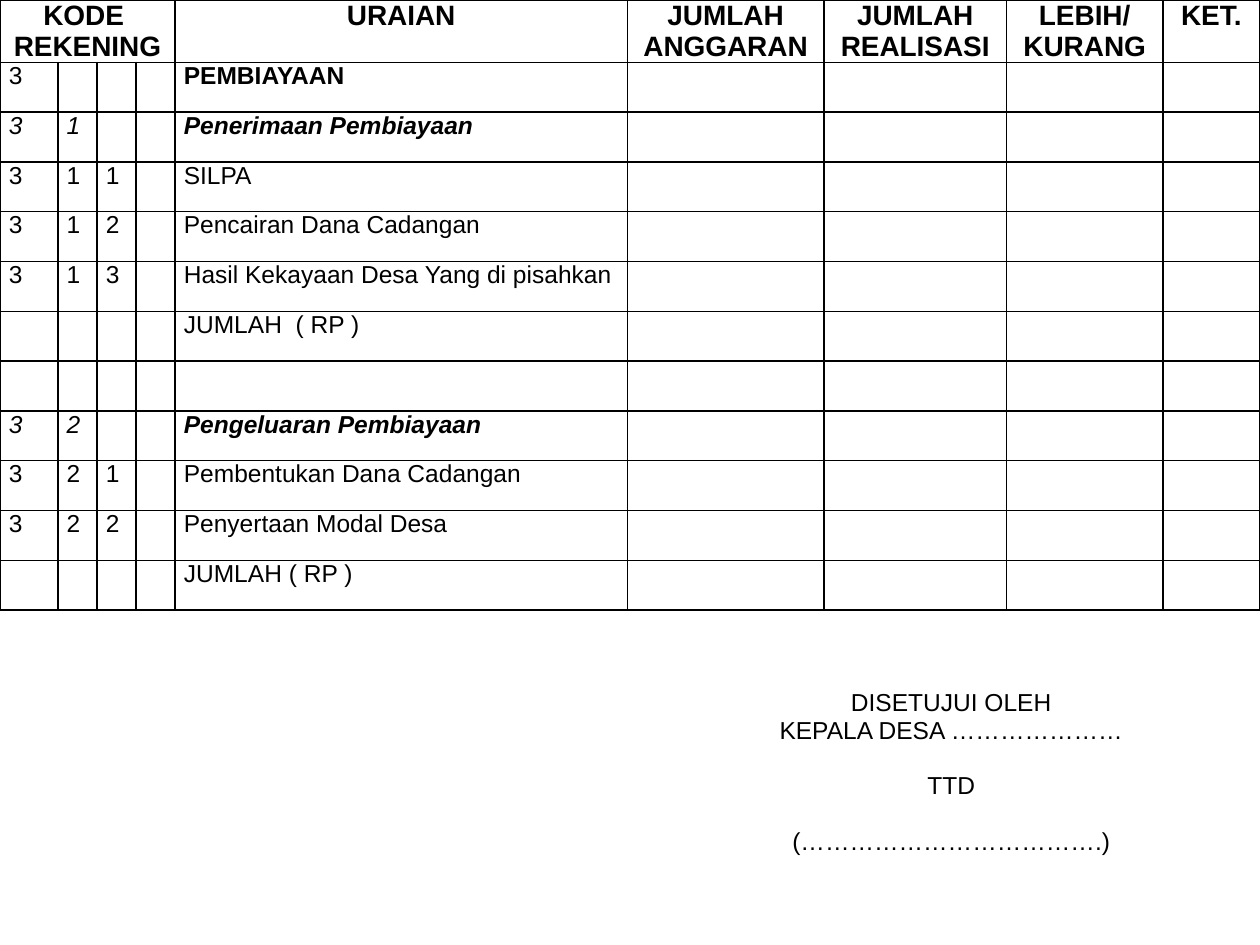
from dataclasses import dataclass

from lxml.etree import SubElement
from pptx import Presentation
from pptx.dml.color import RGBColor
from pptx.enum.text import PP_ALIGN
from pptx.oxml.ns import qn
from pptx.util import Inches, Pt


@dataclass(frozen=True)
class Theme:
    """Colours, font and type sizes of the slide."""
    ink: str = "000000"
    paper: str = "FFFFFF"
    font: str = "Arial"
    header_size: int = 16
    body_size: int = 14
    rule_width: int = 1


THEME = Theme()
COLUMN_WIDTHS = [0.46, 0.31, 0.31, 0.31, 3.59, 1.56, 1.45, 1.24, 0.77]
CODE_COLUMNS = 4
HEADER_HEIGHT = 0.49
HEADERS = {
    0: ["KODE  REKENING"],
    4: ["URAIAN"],
    5: ["JUMLAH", "ANGGARAN"],
    6: ["JUMLAH REALISASI"],
    7: ["LEBIH/", "KURANG"],
    8: ["KET."],
}
ACCOUNTS = [
    ("3", "PEMBIAYAAN"),
    ("31", "Penerimaan Pembiayaan"),
    ("311", "SILPA"),
    ("312", "Pencairan Dana Cadangan"),
    ("313", "Hasil Kekayaan Desa Yang di pisahkan"),
    ("", "JUMLAH  ( RP )"),
    ("", ""),
    ("32", "Pengeluaran Pembiayaan"),
    ("321", "Pembentukan Dana Cadangan"),
    ("322", "Penyertaan Modal Desa"),
    ("", "JUMLAH ( RP )"),
]
SIGNATURE = [
    ("DISETUJUI OLEH", 0),
    ("KEPALA DESA …………………", 0),
    ("TTD", 16),
    ("(……………………………….)", 16),
]


def add_plain_table(slide, rows, columns, box):
    """Add a table without header or banding effects in the given box."""
    table = slide.shapes.add_table(rows, columns, *map(Inches, box)).table
    table.first_row = table.horz_banding = False
    return table


def style_cell(cell, side_margin, ruled=True):
    """Set a cell's margins, borders and fill."""
    cell.margin_left = cell.margin_right = Inches(side_margin)
    cell.margin_top = cell.margin_bottom = 0
    properties = cell._tc.get_or_add_tcPr()
    for side in ("a:lnL", "a:lnR", "a:lnT", "a:lnB"):
        border = SubElement(properties, qn(side), w=str(Pt(THEME.rule_width)))
        if ruled:
            fill = SubElement(border, qn("a:solidFill"))
            SubElement(fill, qn("a:srgbClr"), val=THEME.ink)
        else:
            SubElement(border, qn("a:noFill"))
    cell.fill.background()


def write(cell, lines, size, bold=False, italic=False, align=PP_ALIGN.LEFT):
    """Write each line as one paragraph and return the paragraphs."""
    frame = cell.text_frame
    for index, line in enumerate(lines):
        paragraph = frame.add_paragraph() if index else frame.paragraphs[0]
        paragraph.alignment = align
        run = paragraph.add_run()
        run.text = line
        run.font.name = THEME.font
        run.font.size = Pt(size)
        run.font.bold = bold
        run.font.italic = italic
        run.font.color.rgb = RGBColor.from_string(THEME.ink)
    return frame.paragraphs


def add_budget(slide, box):
    """Build the financing table with its account codes."""
    table = add_plain_table(slide, len(ACCOUNTS) + 1, len(COLUMN_WIDTHS), box)
    for column, width in zip(table.columns, COLUMN_WIDTHS):
        column.width = Inches(width)
    row_height = (box[3] - HEADER_HEIGHT) / len(ACCOUNTS)
    for index, row in enumerate(table.rows):
        row.height = Inches(row_height if index else HEADER_HEIGHT)
        for cell in row.cells:
            style_cell(cell, 0.07 if index else 0.04)

    table.cell(0, 0).merge(table.cell(0, CODE_COLUMNS - 1))
    for column, lines in HEADERS.items():
        write(table.cell(0, column), lines, THEME.header_size,
              bold=True, align=PP_ALIGN.CENTER)
    for index, (code, description) in enumerate(ACCOUNTS, start=1):
        group = len(code) == 2
        for column, digit in enumerate(code):
            write(table.cell(index, column), [digit], THEME.body_size, italic=group)
        if description:
            write(table.cell(index, CODE_COLUMNS), [description], THEME.body_size,
                  bold=len(code) in (1, 2), italic=group)


def add_signature(slide, box):
    """Build the approval block for the village head."""
    cell = add_plain_table(slide, 1, 1, box).cell(0, 0)
    style_cell(cell, 0.07, ruled=False)
    paragraphs = write(cell, [line for line, _ in SIGNATURE],
                       THEME.body_size, align=PP_ALIGN.CENTER)
    for paragraph, (_, gap) in zip(paragraphs, SIGNATURE):
        paragraph.space_before = Pt(gap)


def main():
    """Build and save the slide."""
    deck = Presentation()
    deck.slide_width, deck.slide_height = Inches(10), Inches(7.5)
    slide = deck.slides.add_slide(deck.slide_layouts[6])
    slide.background.fill.solid()
    slide.background.fill.fore_color.rgb = RGBColor.from_string(THEME.paper)
    add_budget(slide, (0, 0, 10, 4.84))
    add_signature(slide, (6.02, 5.47, 3.06, 1.64))
    deck.save("out.pptx")


if __name__ == "__main__":
    main()
